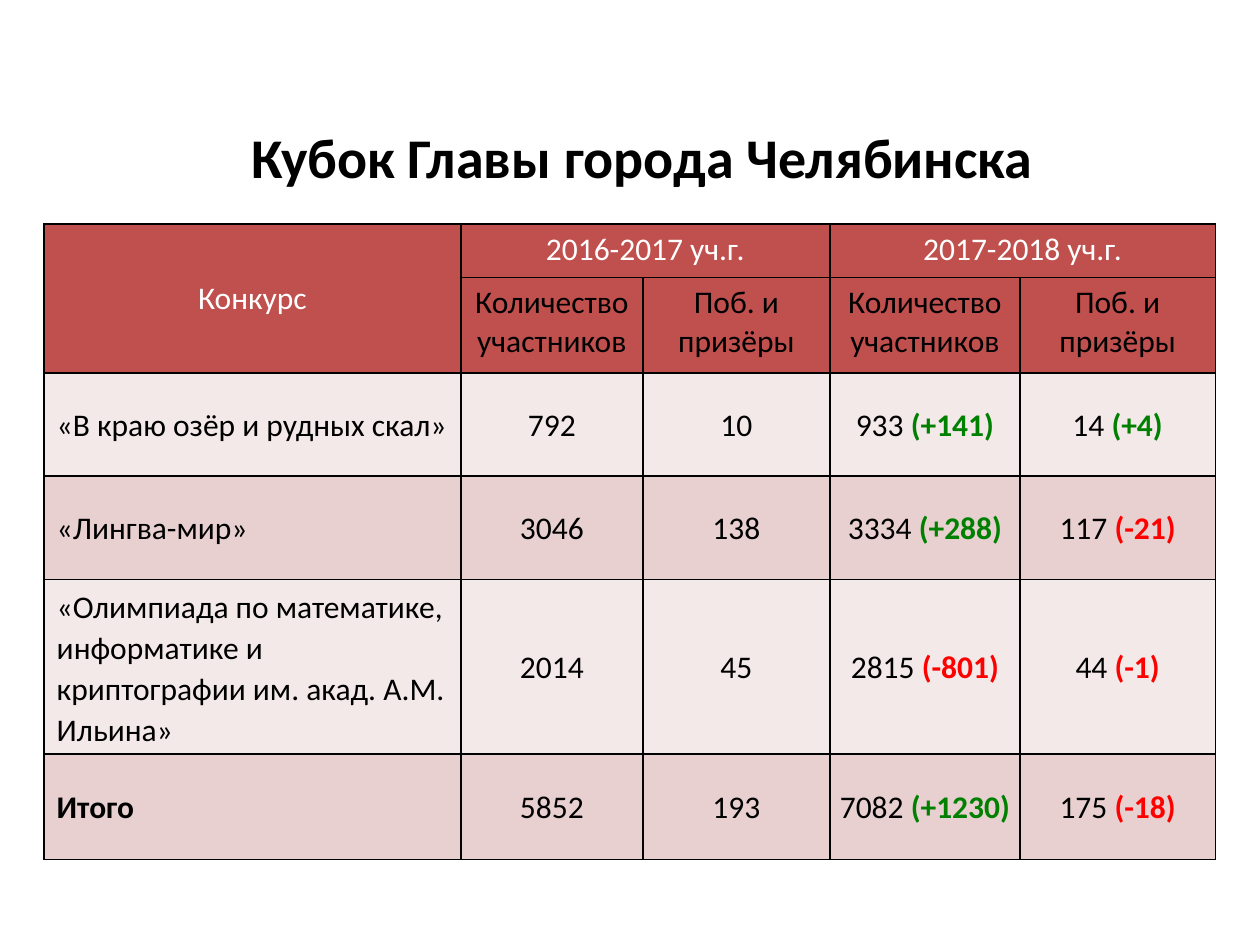
from dataclasses import dataclass

from lxml.etree import SubElement
from pptx import Presentation
from pptx.dml.color import RGBColor
from pptx.enum.text import MSO_ANCHOR, PP_ALIGN
from pptx.oxml.ns import qn
from pptx.util import Cm, Pt


@dataclass(frozen=True)
class Theme:
    font: str = "Calibri"
    title: int = 32
    body: int = 18
    line: int = 1
    ink: str = "000000"
    white: str = "FFFFFF"
    head: str = "C0504D"
    bands: tuple = ("F4E9E9", "E8D0D0")
    gain: str = "008000"
    loss: str = "FF0000"


THEME = Theme()

# Column widths and row heights in cm
COLS = (8.4, 3.67, 3.77, 3.83, 3.94)
ROWS = (1.07, 1.93, 2.08, 2.08, 3.5, 2.13)
YEARS = ("2016-2017 уч.г.", "2017-2018 уч.г.")
HEADS = ("Количество участников", "Поб. и призёры")

# Each count is a value, with its change where there is one
DATA = (
    ("«В краю озёр и рудных скал»", "792", "10", "933 (+141)", "14 (+4)"),
    ("«Лингва-мир»", "3046", "138", "3334 (+288)", "117 (-21)"),
    ("«Олимпиада по математике, информатике и криптографии им. акад. А.М. Ильина»",
     "2014", "45", "2815 (-801)", "44 (-1)"),
    ("Итого", "5852", "193", "7082 (+1230)", "175 (-18)"),
)


def style(para, size, color, bold=False, align=PP_ALIGN.CENTER):
    para.alignment = align
    font = para.font
    font.name, font.size, font.bold = THEME.font, Pt(size), bold
    font.color.rgb = RGBColor.from_string(color)


def edge(cell):
    """Draw the four borders of a cell; they must come before its fill."""
    props = cell._tc.get_or_add_tcPr()
    for side in ("a:lnL", "a:lnR", "a:lnT", "a:lnB"):
        line = SubElement(props, qn(side), w=str(Pt(THEME.line)))
        fill = SubElement(line, qn("a:solidFill"))
        SubElement(fill, qn("a:srgbClr"), val=THEME.ink)


def paint(cell, color):
    edge(cell)
    cell.fill.solid()
    cell.fill.fore_color.rgb = RGBColor.from_string(color)


def label(cell, text, color):
    cell.text = text
    style(cell.text_frame.paragraphs[0], THEME.body, color)


def count(cell, text):
    """Write a value and colour its change by sign."""
    value, gap, change = text.partition(" ")
    para = cell.text_frame.paragraphs[0]
    style(para, THEME.body, THEME.ink)
    para.line_spacing = 1.07
    para.add_run().text = value + gap
    if change:
        run = para.add_run()
        run.text = change
        run.font.bold = True
        tone = THEME.gain if "+" in change else THEME.loss
        run.font.color.rgb = RGBColor.from_string(tone)


def add_title(slide, left, top, width, height):
    box = slide.shapes.add_textbox(Cm(left), Cm(top), Cm(width), Cm(height))
    frame = box.text_frame
    frame.word_wrap = True
    para = frame.paragraphs[0]
    para.text = "Кубок Главы города Челябинска"
    style(para, THEME.title, THEME.ink, bold=True)


def add_scores(slide, left, top):
    table = slide.shapes.add_table(
        len(ROWS), len(COLS), Cm(left), Cm(top), Cm(sum(COLS)), Cm(sum(ROWS))
    ).table
    table.first_row = table.horz_banding = False
    for col, width in zip(table.columns, COLS):
        col.width = Cm(width)
    for num, (row, height) in enumerate(zip(table.rows, ROWS)):
        row.height = Cm(height)
        for cell in row.cells:
            paint(cell, THEME.head if num < 2 else THEME.bands[num % 2])

    # Header: contest over two rows, each year over two columns
    first = table.cell(0, 0)
    first.merge(table.cell(1, 0))
    first.vertical_anchor = MSO_ANCHOR.MIDDLE
    label(first, "Конкурс", THEME.white)
    for num, year in enumerate(YEARS):
        start = 1 + 2 * num
        table.cell(0, start).merge(table.cell(0, start + 1))
        label(table.cell(0, start), year, THEME.white)
        for step, head in enumerate(HEADS):
            label(table.cell(1, start + step), head, THEME.ink)

    # Body: name at left, then the counts
    for num, (name, *counts) in enumerate(DATA, 2):
        cell = table.cell(num, 0)
        cell.text = name
        cell.vertical_anchor = MSO_ANCHOR.MIDDLE
        para = cell.text_frame.paragraphs[0]
        style(para, THEME.body, THEME.ink, name == "Итого", PP_ALIGN.LEFT)
        para.line_spacing = 1.07
        for col, text in enumerate(counts, 1):
            cell = table.cell(num, col)
            cell.vertical_anchor = MSO_ANCHOR.MIDDLE
            cell.margin_left = cell.margin_right = Cm(0.18)
            count(cell, text)


def main():
    deck = Presentation()
    deck.slide_width, deck.slide_height = Cm(25.4), Cm(19.05)
    slide = deck.slides.add_slide(deck.slide_layouts[6])
    add_title(slide, 0.5, 2.34, 24.9, 1.62)
    add_scores(slide, 0.89, 4.52)
    deck.save("out.pptx")


if __name__ == "__main__":
    main()
